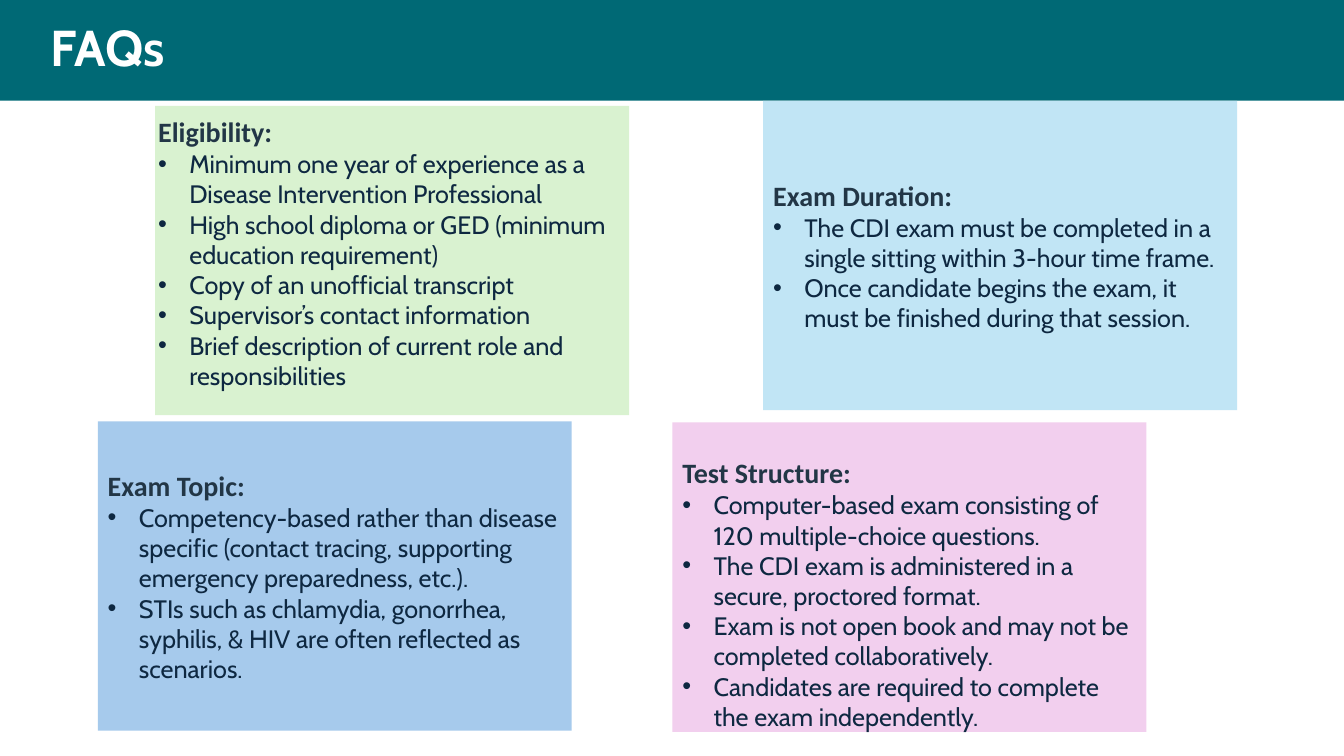
from lxml import etree
from pptx import Presentation
from pptx.dml.color import RGBColor
from pptx.enum.shapes import MSO_SHAPE
from pptx.enum.text import MSO_ANCHOR, MSO_AUTO_SIZE, PP_ALIGN
from pptx.oxml.ns import qn
from pptx.util import Inches, Pt

COLORS = {
    "teal": "006975", "white": "FFFFFF", "heading": "223646", "body": "0E2841",
    "green": "D9F2D0", "blue": "A6CAEC", "pink": "F2CFEE", "sky": "C1E5F5",
}
FORMATS = {
    "title": {"name": "Cabin", "size": Pt(36), "bold": True, "color": "white"},
    "heading": {"name": "Calibri", "size": Pt(20), "bold": True, "color": "heading"},
    "body": {"name": "Cabin", "size": Pt(18), "bold": False, "color": "body"},
}
CARD_SIZE = (4.7, 3.07)
BULLET_INDENT = Inches(0.31)

ELIGIBILITY = ("Eligibility:", [
    "Minimum one year of experience as a Disease Intervention Professional",
    "High school diploma or GED (minimum education requirement)",
    "Copy of an unofficial transcript",
    "Supervisor’s contact information",
    "Brief description of current role and responsibilities",
])
# Left, top, fill, top inset, heading, bullets
CARDS = [
    (0.97, 4.18, "blue", 0.05, "Exam Topic:", [
        "Competency-based rather than disease specific (contact tracing, "
        "supporting emergency preparedness, etc.).",
        "STIs such as chlamydia, gonorrhea, syphilis, & HIV are often "
        "reflected as scenarios.",
    ]),
    (6.67, 4.19, "pink", 0.38, "Test Structure:", [
        "Computer-based exam consisting of 120 multiple-choice questions.",
        "The CDI exam is administered in a secure, proctored format.",
        "Exam is not open book and may not be completed collaboratively.",
        "Candidates are required to complete the exam independently.",
    ]),
    (7.57, 1, "sky", 0.05, "Exam Duration:", [
        "The CDI exam must be completed in a single sitting within 3-hour time frame.",
        "Once candidate begins the exam, it must be finished during that session.",
    ]),
]


class SlideBuilder:
    def __init__(self, slide):
        self.slide = slide

    def rectangle(self, left, top, width, height, fill):
        shape = self.slide.shapes.add_shape(
            MSO_SHAPE.RECTANGLE, *map(Inches, (left, top, width, height)))
        shape.shadow.inherit = False
        shape.fill.solid()
        shape.fill.fore_color.rgb = RGBColor.from_string(COLORS[fill])
        shape.line.fill.background()
        return shape

    def frame(self, shape, **settings):
        text_frame = shape.text_frame
        text_frame.word_wrap = True
        for name, value in settings.items():
            setattr(text_frame, name, value)
        return text_frame

    def styled_text(self, paragraph, text, style):
        paragraph.alignment = PP_ALIGN.LEFT
        run = paragraph.add_run()
        run.text = text
        for name, value in FORMATS[style].items():
            if name == "color":
                run.font.color.rgb = RGBColor.from_string(COLORS[value])
            else:
                setattr(run.font, name, value)

    def bullet(self, paragraph):
        properties = paragraph._p.get_or_add_pPr()
        properties.set("marL", str(BULLET_INDENT))
        properties.set("indent", str(-BULLET_INDENT))
        etree.SubElement(properties, qn("a:buFont")).set("typeface", "Arial")
        etree.SubElement(properties, qn("a:buChar")).set("char", "•")

    def faq(self, text_frame, heading, bullets):
        self.styled_text(text_frame.paragraphs[0], heading, "heading")
        for text in bullets:
            paragraph = text_frame.add_paragraph()
            self.bullet(paragraph)
            self.styled_text(paragraph, text, "body")

    def title(self, text):
        banner = self.rectangle(0, 0, 13.33, 1, "teal")
        text_frame = self.frame(
            banner, vertical_anchor=MSO_ANCHOR.MIDDLE, margin_left=Inches(0.5))
        text_frame.paragraphs[0].line_spacing = 0.9
        self.styled_text(text_frame.paragraphs[0], text, "title")

    def card(self, left, top, fill, inset, heading, bullets):
        shape = self.rectangle(left, top, *CARD_SIZE, fill)
        text_frame = self.frame(
            shape, vertical_anchor=MSO_ANCHOR.MIDDLE, margin_top=Inches(inset))
        self.faq(text_frame, heading, bullets)

    def text_box(self, left, top, width, height, heading, bullets):
        box = self.slide.shapes.add_textbox(
            *map(Inches, (left, top, width, height)))
        text_frame = self.frame(box, auto_size=MSO_AUTO_SIZE.SHAPE_TO_FIT_TEXT)
        self.faq(text_frame, heading, bullets)


def main():
    presentation = Presentation()
    presentation.slide_width = Inches(13.33)
    presentation.slide_height = Inches(7.5)
    builder = SlideBuilder(
        presentation.slides.add_slide(presentation.slide_layouts[6]))

    # Eligibility panel, title banner and eligibility text
    builder.rectangle(1.54, 1.05, *CARD_SIZE, "green")
    builder.title("FAQs")
    builder.text_box(1.47, 1.09, 4.77, 3.5, *ELIGIBILITY)

    # Remaining question cards
    for card in CARDS:
        builder.card(*card)

    presentation.save("out.pptx")


if __name__ == "__main__":
    main()
